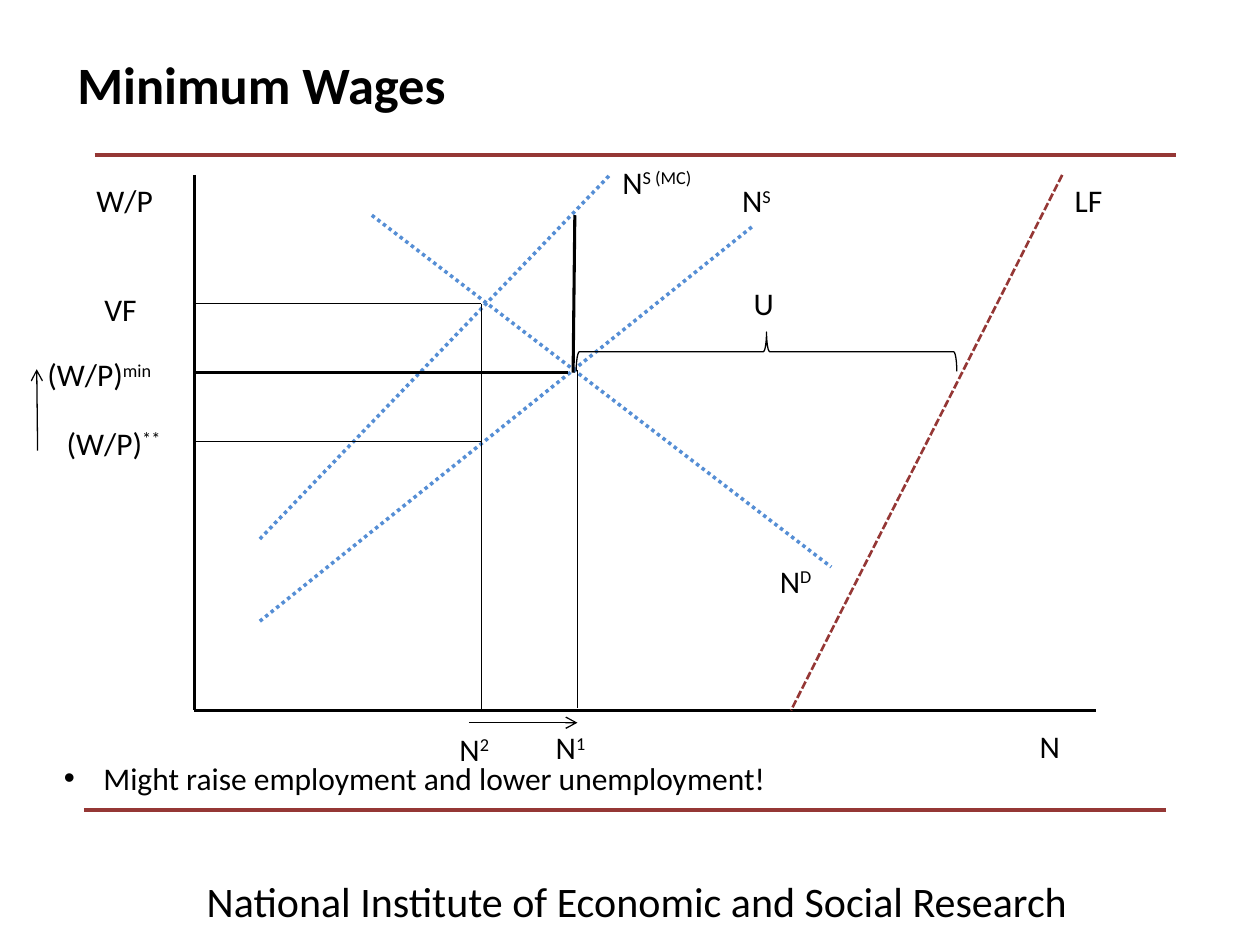
from dataclasses import dataclass
from lxml.etree import SubElement as Sub
from pptx import Presentation
from pptx.dml.color import RGBColor as Rgb
from pptx.enum.dml import MSO_LINE as Dash
from pptx.enum.shapes import MSO_CONNECTOR as Con, MSO_SHAPE as Form
from pptx.enum.text import MSO_ANCHOR as Anchor, MSO_AUTO_SIZE as Fit, PP_ALIGN as Align
from pptx.oxml.ns import qn
from pptx.util import Pt


@dataclass(frozen=True)
class Theme:
    """Colours, font, type sizes and line widths."""
    ink: Rgb = Rgb.from_string("000000")
    red: Rgb = Rgb.from_string("953735")
    blue: Rgb = Rgb.from_string("558ED5")
    face: str = "Calibri"
    head: int = 30
    foot: int = 24
    body: int = 18
    thin: float = 0.75
    bold: float = 1.75
    rule: float = 2.25


LOOK = Theme()


def put(item, vals):
    """Set each named value on the item."""
    for name, val in vals.items():
        setattr(item, name, val)


def place(shape, box):
    """Move and size a shape to a box in points."""
    put(shape, dict(zip(("left", "top", "width", "height"), map(Pt, box))))


def write(shape, text, size, sup="", bold=False, anchor=Anchor.TOP):
    """Write one line with an optional superscript."""
    frame = shape.text_frame
    put(frame, {"word_wrap": True, "auto_size": Fit.SHAPE_TO_FIT_TEXT,
                "vertical_anchor": anchor})
    para = frame.paragraphs[0]
    para.alignment = Align.LEFT
    for part, base in ((text, None), (sup, "30000")):
        if part:
            run = para.add_run()
            run.text = part
            put(run.font, {"size": Pt(size), "name": LOOK.face, "bold": bold})
            run.font.color.rgb = LOOK.ink
            if base:
                run._r.get_or_add_rPr().set("baseline", base)
    return para


def label(slide, box, text, size=LOOK.body, sup=""):
    """Add a text box and return its paragraph."""
    return write(slide.shapes.add_textbox(*map(Pt, box)), text, size, sup)


def line(slide, ends, width=LOOK.thin, hue=LOOK.ink, dash=None, arrow=False):
    """Draw a straight line between two points."""
    item = slide.shapes.add_connector(Con.STRAIGHT, *map(Pt, ends))
    item.line.color.rgb = hue
    put(item.line, {"width": Pt(width), "dash_style": dash})
    if arrow:
        Sub(item.line._get_or_add_ln(), qn("a:tailEnd"), type="arrow")
    Sub(item._element.spPr, qn("a:effectLst"))


def header(slide, box):
    """Place the title and the rule below it."""
    x, y, w, h = box
    place(slide.shapes.title, box)
    write(slide.shapes.title, "Minimum Wages", LOOK.head, bold=True, anchor=Anchor.MIDDLE)
    line(slide, (x + 17, y + 62.5, x + 635, y + 62.5), LOOK.rule, LOOK.red)


def footer(slide, box):
    """Place the lower rule and the institute name."""
    x, y, w, h = box
    line(slide, (x, y, x + w, y), LOOK.rule, LOOK.red)
    label(slide, (x + 63, y + 34, 572, 29),
          "National Institute of Economic and Social Research", LOOK.foot)


def point(slide, box):
    """Place the bulleted conclusion."""
    para = label(slide, box, "Might raise employment and lower unemployment!")
    props = para._p.get_or_add_pPr()
    put_at = {"marL": Pt(22.5), "indent": -Pt(22.5)}
    for name, val in put_at.items():
        props.set(name, str(int(val)))
    Sub(props, qn("a:buFont"), typeface="Arial")
    Sub(props, qn("a:buChar"), char="•")


def brace(slide, mid, span, depth):
    """Draw a brace that opens downward around a centre."""
    x, y = mid
    box = (x - depth / 2, y - span / 2, depth, span)
    item = slide.shapes.add_shape(Form.LEFT_BRACE, *map(Pt, box))
    put(item, {"rotation": 90})
    put(item.shadow, {"inherit": False})
    item.fill.background()
    item.line.color.rgb = LOOK.ink
    item.line.width = Pt(LOOK.thin)


def graph(slide, box):
    """Draw the labour market diagram with its origin at the box."""
    x, y, w, h = box
    low, high, floor, pay, fair = 164, 219, 113, 152.5, 73.5
    axis = {"width": LOOK.bold}
    curve = {"width": 2, "hue": LOOK.blue, "dash": Dash.ROUND_DOT}
    force = {"width": 1.5, "hue": LOOK.red, "dash": Dash.SQUARE_DOT}
    arrow = {"arrow": True}
    lines = (
        ((0, 0, 0, h), axis),
        ((0, h, w, h), axis),
        ((496, 0, 341, h), force),
        ((101.5, 23, 364, 224), curve),
        ((37.5, 255, 319.5, 29), curve),
        ((37.5, 208, 237.5, 0), curve),
        ((0, floor, 213.5, floor), axis),
        ((217.5, 23, 216.5, floor), axis),
        ((high, 111.5, high, 304.5), {}),
        ((0, fair, low, fair), {}),
        ((low, fair, low, h), {}),
        ((0, pay, low, pay), {}),
        ((157, 313, high, 313), arrow),
        ((-89.5, 157.5, -90, 111), arrow),
    )
    for (x1, y1, x2, y2), style in lines:
        line(slide, (x + x1, y + y1, x + x2, y + y2), **style)
    brace(slide, (x + 327, y + 101), 217.5, 22.5)
    labels = (
        (-63, 0, 62.5, "W/P", ""),
        (476, 312, 39.5, "N", ""),
        (327.5, 217.5, 85, "N", "D"),
        (496, 0, 53, "LF", ""),
        (306, 0, 85, "N", "S"),
        (237.5, -10.5, 85, "N", "S (MC)"),
        (199.5, 312.5, 39, "N", "1"),
        (144.5, 313.5, 39, "N", "2"),
        (-91, 99.5, 85.5, "(W/P)", "min"),
        (-80, 138.5, 76, "(W/P)", "**"),
        (-58.5, 62, 38, "VF", ""),
        (312.5, 59, 29.5, "U", ""),
    )
    for dx, dy, wide, text, sup in labels:
        label(slide, (x + dx, y + dy, wide, 29), text, sup=sup)


def main():
    """Build and save the slide."""
    deck = Presentation()
    put(deck, {"slide_width": Pt(720), "slide_height": Pt(540)})
    slide = deck.slides.add_slide(deck.slide_layouts[5])
    header(slide, (37, 26, 648, 44))
    footer(slide, (48, 463, 618, 63))
    graph(slide, (111, 100, 515.5, 306))
    point(slide, (29.5, 430, 679, 29))
    deck.save("out.pptx")


if __name__ == "__main__":
    main()
